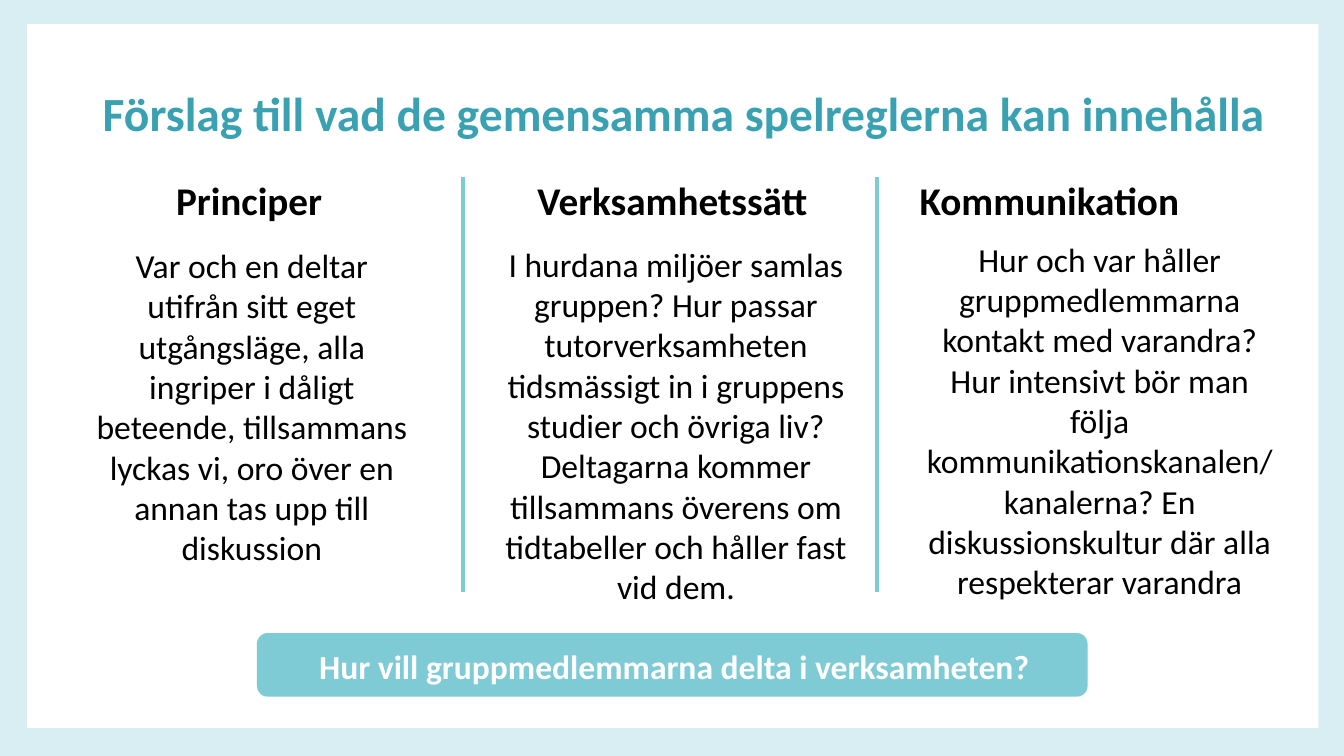
from lxml import etree
from pptx import Presentation
from pptx import util as u
from pptx.dml.color import RGBColor
from pptx.enum import shapes, text
from pptx.oxml import ns

TURQUOISE = RGBColor(0x7E, 0xCA, 0xD5)
TEAL = RGBColor(0x39, 0xA1, 0xB1)
BLACK = RGBColor(0, 0, 0)
WHITE = RGBColor(0xFF, 0xFF, 0xFF)
FONT = "Calibri"
WIDTH, HEIGHT = 960, 540
DIVIDERS = (330.5, 626.4)

COLUMNS = [
    ("Principer", 67, (55.4, 171.4, 249, 211),
     "Var och en deltar utifrån sitt eget utgångsläge, alla ingriper i dåligt "
     "beteende, tillsammans lyckas vi, oro över en annan tas upp till diskussion"),
    ("Verksamhetssätt", 369.4, (351.4, 170.6, 262.8, 269.3),
     "I hurdana miljöer samlas gruppen? Hur passar tutorverksamheten tidsmässigt "
     "in i gruppens studier och övriga liv? Deltagarna kommer tillsammans överens "
     "om tidtabeller och håller fast vid dem."),
    ("Kommunikation", 638.6, (649.4, 167, 272.2, 269.3),
     "Hur och var håller gruppmedlemmarna kontakt med varandra? Hur intensivt bör "
     "man följa kommunikationskanalen/\nkanalerna? En diskussionskultur där alla "
     "respekterar varandra"),
]


def place(shape, left, top, width, height):
    """Move and size a shape, in points."""
    shape.left, shape.top = u.Pt(left), u.Pt(top)
    shape.width, shape.height = u.Pt(width), u.Pt(height)


def write(box, words, size=24, color=BLACK, bold=False, align=text.PP_ALIGN.CENTER,
          anchor=text.MSO_ANCHOR.TOP, spacing=1.0, before=0):
    """Fill a box with one formatted paragraph."""
    frame = box.text_frame
    frame.word_wrap = True
    frame.auto_size = text.MSO_AUTO_SIZE.NONE
    frame.vertical_anchor = anchor
    para = frame.paragraphs[0]
    para.text = words
    para.alignment = align
    para.line_spacing = spacing
    para.space_before = u.Pt(before)
    for span in para.runs:
        span.font.name = FONT
        span.font.size = u.Pt(size)
        span.font.bold = bold
        span.font.color.rgb = color


def add_text(page, area, words, **style):
    """Add a formatted text box."""
    box = page.shapes.add_textbox(*map(u.Pt, area))
    write(box, words, **style)


def add_panel(page, area, color, kind=shapes.MSO_SHAPE.RECTANGLE, opacity=100):
    """Add a plain filled shape without outline."""
    panel = page.shapes.add_shape(kind, *map(u.Pt, area))
    panel.shadow.inherit = False
    panel.fill.solid()
    panel.fill.fore_color.rgb = color
    panel.line.fill.background()
    if opacity < 100:
        tint = panel.fill._xPr.find(".//" + ns.qn("a:srgbClr"))
        etree.SubElement(tint, ns.qn("a:alpha"), val=str(opacity * 1000))


def add_divider(page, left):
    """Add a vertical line between two columns."""
    line = page.shapes.add_connector(shapes.MSO_CONNECTOR.STRAIGHT,
                                     u.Pt(left), u.Pt(126.7), u.Pt(left), u.Pt(422.6))
    line.line.color.rgb = TURQUOISE
    line.line.width = u.Pt(3)
    etree.SubElement(line._element.spPr, ns.qn("a:effectLst"))


def remove_bullet(box):
    """Clear the bullet and indent of the first paragraph."""
    settings = box.text_frame.paragraphs[0]._p.get_or_add_pPr()
    settings.set("marL", "0")
    settings.set("indent", "0")
    etree.SubElement(settings, ns.qn("a:buNone"))


def add_headings(page, body):
    """Write the column headings, the first one in the body placeholder."""
    style = dict(size=28, bold=True, spacing=0.8, before=10)
    for number, (heading, left, _, _) in enumerate(COLUMNS):
        area = (left, 128.9, 221.8, 35.3)
        if number == 0:
            place(body, *area)
            write(body, heading, **style)
            remove_bullet(body)
        else:
            add_text(page, area, heading, **style)


def main():
    """Build and save the slide."""
    deck = Presentation()
    deck.slide_width, deck.slide_height = u.Pt(WIDTH), u.Pt(HEIGHT)
    page = deck.slides.add_slide(deck.slide_layouts[1])
    title, body = page.placeholders
    tree = page.shapes._spTree

    add_panel(page, (0, 0, WIDTH, HEIGHT), TURQUOISE, opacity=30)
    add_panel(page, (19.4, 17.3, 922.3, 502.6), WHITE)
    for holder in (title, body):
        tree.append(holder._element)

    place(title, 66.2, 45.4, 873.4, 75.6)
    write(title, "Förslag till vad de gemensamma spelreglerna kan innehålla",
          size=34, color=TEAL, bold=True, align=text.PP_ALIGN.LEFT,
          anchor=text.MSO_ANCHOR.MIDDLE, spacing=0.9)
    add_headings(page, body)
    for _, _, area, words in COLUMNS:
        add_text(page, area, words)
    for left in DIVIDERS:
        add_divider(page, left)

    add_panel(page, (183.6, 452.2, 593.3, 45.4), TURQUOISE,
              kind=shapes.MSO_SHAPE.ROUNDED_RECTANGLE)
    add_text(page, (183.6, 457.9, 596.2, 36.7),
             "Hur vill gruppmedlemmarna delta i verksamheten?", color=WHITE, bold=True)
    deck.save("out.pptx")


if __name__ == "__main__":
    main()
